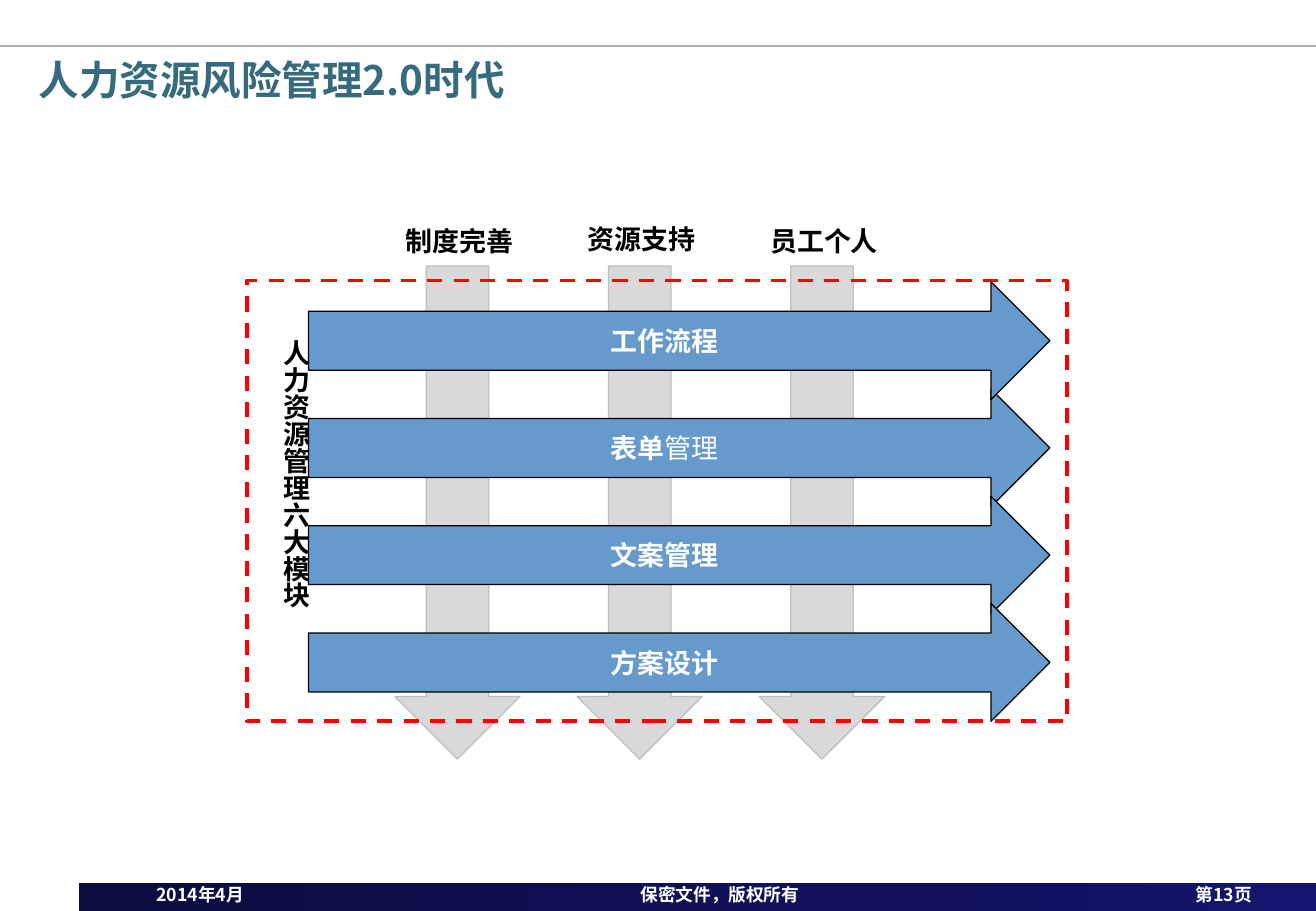
import pptx
import pptx.dml.color
import pptx.enum.dml
import pptx.enum.shapes
import pptx.enum.text
import pptx.oxml.ns
import pptx.util
from lxml import etree
from pptx.dml.color import RGBColor
from pptx.enum.shapes import MSO_SHAPE
from pptx.enum.text import MSO_ANCHOR, PP_ALIGN
from pptx.util import Inches

FONT = "Noto Sans CJK SC"
WHITE = RGBColor(0xFF, 0xFF, 0xFF)
BLACK = RGBColor(0x00, 0x00, 0x00)
RED = RGBColor(0xFF, 0x00, 0x00)
TEAL = RGBColor(0x36, 0x6B, 0x7E)
BLUE = RGBColor(0x66, 0x99, 0xCC)
LIGHT_GRAY = RGBColor(0xD9, 0xD9, 0xD9)
MID_GRAY = RGBColor(0xBF, 0xBF, 0xBF)
RULE_GRAY = RGBColor(0xAB, 0xAF, 0xB2)
NAVY_DARK = RGBColor(0x0C, 0x0C, 0x40)
NAVY = RGBColor(0x14, 0x14, 0x6C)


def write_text(shape, text, size=16, color=BLACK, bold=True,
               align=PP_ALIGN.LEFT, anchor=MSO_ANCHOR.TOP, wrap=True):
    """Append a formatted run to the first paragraph of a shape."""
    frame = shape.text_frame
    frame.word_wrap = wrap
    frame.vertical_anchor = anchor
    paragraph = frame.paragraphs[0]
    paragraph.alignment = align
    run = paragraph.add_run()
    run.text = text
    run.font.size = pptx.util.Pt(size)
    run.font.bold = bold
    run.font.color.rgb = color
    run.font.name = FONT
    east_asian = etree.SubElement(run.font._element, pptx.oxml.ns.qn("a:ea"))
    east_asian.set("typeface", FONT)


def add_box(kind, left, top, width, height, fill, line, line_width=0.75):
    """Add a preset shape; None leaves out the fill or the line."""
    shape = slide.shapes.add_shape(
        kind, Inches(left), Inches(top), Inches(width), Inches(height))
    shape.shadow.inherit = False
    if fill is None:
        shape.fill.background()
    else:
        shape.fill.solid()
        shape.fill.fore_color.rgb = fill
    if line is None:
        shape.line.fill.background()
    else:
        shape.line.color.rgb = line
        shape.line.width = pptx.util.Pt(line_width)
    return shape


presentation = pptx.Presentation()
presentation.slide_width = Inches(10.83)
presentation.slide_height = Inches(7.5)
slide = presentation.slides.add_slide(presentation.slide_layouts[5])

# Footer bar and its three texts
bar = add_box(MSO_SHAPE.RECTANGLE, 0.65, 7.27, 10.18, 0.23, NAVY_DARK, None)
bar.fill.gradient()
bar.fill.gradient_angle = 0
for stop, color, position in zip(bar.fill.gradient_stops, (NAVY_DARK, NAVY), (0, 1)):
    stop.color.rgb = color
    stop.position = position

for text, left, width, align in (
        ("第13页", 9.26, 1.62, PP_ALIGN.CENTER),
        ("2014年4月", 1.19, 1.81, PP_ALIGN.LEFT),
        ("保密文件，版权所有", 2.99, 5.87, PP_ALIGN.CENTER)):
    footer = slide.shapes.add_textbox(
        Inches(left), Inches(7.23), Inches(width), Inches(0.28))
    write_text(footer, text, size=10.5, color=WHITE, align=align)

# Rule above the title
rule = slide.shapes.add_connector(
    pptx.enum.shapes.MSO_CONNECTOR.STRAIGHT,
    Inches(0), Inches(0.38), Inches(10.83), Inches(0.38))
rule.line.color.rgb = RULE_GRAY
rule.line.width = pptx.util.Pt(1)
etree.SubElement(rule._element.spPr, pptx.oxml.ns.qn("a:effectLst"))

# Title
title = slide.shapes.title
title.left, title.top = Inches(0.22), Inches(0.4)
title.width, title.height = Inches(10.27), Inches(0.83)
title.text_frame.auto_size = pptx.enum.text.MSO_AUTO_SIZE.NONE
write_text(title, "人力资源风险管理2.0时代", size=24, color=TEAL)

# Vertical arrows with their headings
for column, (heading, top) in enumerate(
        (("制度完善", 1.8), ("资源支持", 1.78), ("员工个人", 1.8))):
    left = 3.25 + 1.5 * column
    add_box(MSO_SHAPE.DOWN_ARROW, left, 2.19, 1.03, 4.06, LIGHT_GRAY, MID_GRAY)
    label = slide.shapes.add_textbox(
        Inches(left - 0.01), Inches(top), Inches(1.38), Inches(0.37))
    write_text(label, heading)

# Horizontal arrows, the first row lying on top of the others
for row, runs in (
        (1, (("表单", True), ("管理", False))),
        (2, (("文案管理", True),)),
        (3, (("方案设计", True),)),
        (0, (("工作流程", True),))):
    arrow = add_box(MSO_SHAPE.RIGHT_ARROW, 2.54, 2.32 + 0.883 * row, 6.1, 0.97,
                    BLUE, BLACK)
    for text, bold in runs:
        write_text(arrow, text, color=WHITE, bold=bold, align=PP_ALIGN.CENTER,
                   anchor=MSO_ANCHOR.MIDDLE, wrap=False)

# Dashed frame
frame_box = add_box(MSO_SHAPE.RECTANGLE, 2.03, 2.31, 6.75, 3.63, None, RED, 2.25)
frame_box.line.dash_style = pptx.enum.dml.MSO_LINE.DASH

# Vertical label on the left
side_label = slide.shapes.add_textbox(
    Inches(2.15), Inches(2.7), Inches(0.47), Inches(2.84))
write_text(side_label, "人力资源管理六大模块")
side_label.text_frame._txBody.bodyPr.set("vert", "eaVert")

presentation.save("out.pptx")
